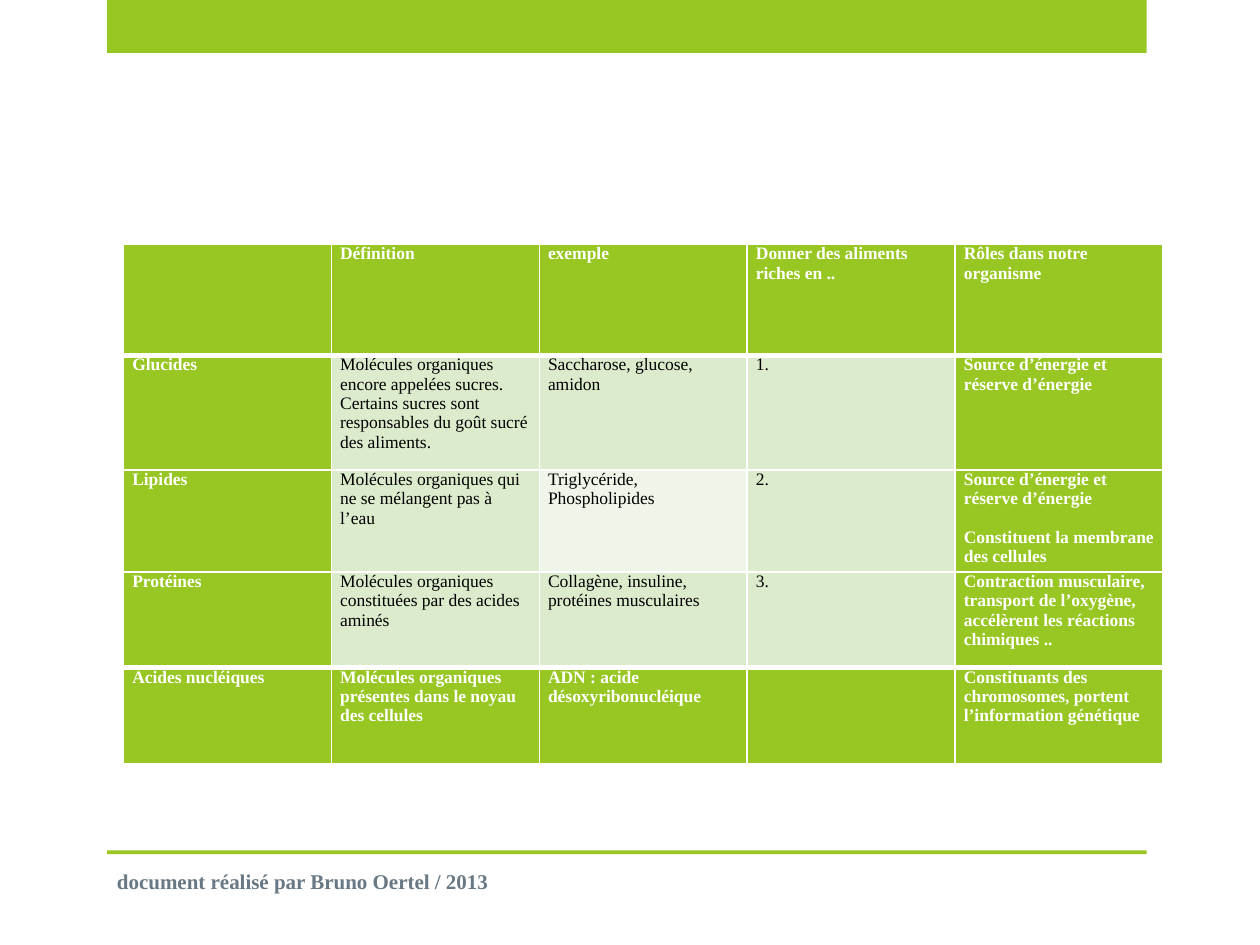
import pptx
import pptx.dml.color
import pptx.enum.shapes
import pptx.enum.text
import pptx.oxml.ns
import pptx.util
import lxml.etree

Inches = pptx.util.Inches
Pt = pptx.util.Pt

# Content: each cell is a list of paragraphs
HEADER = [[], ["Définition"], ["exemple"], ["Donner des aliments riches en .."],
          ["Rôles dans notre organisme"]]
NUTRIENTS = [
    [["Glucides"],
     ["Molécules organiques encore appelées sucres. Certains sucres sont "
      "responsables du goût sucré des aliments."],
     ["Saccharose, glucose, amidon"], ["1."],
     ["Source d’énergie et réserve d’énergie"]],
    [["Lipides"],
     ["Molécules organiques qui ne se mélangent pas à l’eau"],
     ["Triglycéride, Phospholipides"], ["2."],
     ["Source d’énergie et réserve d’énergie",
      "Constituent la membrane des cellules"]],
    [["Protéines"],
     ["Molécules organiques constituées par des acides aminés"],
     ["Collagène, insuline, protéines musculaires"], ["3."],
     ["Contraction musculaire, transport de l’oxygène, accélèrent les "
      "réactions chimiques .."]],
    [["Acides nucléiques"],
     ["Molécules organiques présentes dans le noyau des cellules"],
     ["ADN : acide désoxyribonucléique"], [],
     ["Constituants des chromosomes, portent l’information génétique"]],
]
ROWS = [HEADER] + NUTRIENTS
FOOTER = "document réalisé par Bruno Oertel / 2013"

THEME = {
    "font": "Times New Roman", "cell_size": 10, "footer_size": 12,
    "green": "98C723", "pale": "DDEBCD", "palest": "EFF5E8",
    "white": "FFFFFF", "black": "000000", "grey": "687884",
    "thin": 1, "thick": 3,
}

# Layout in inches
BAND_LEFT, WIDTH = 0.85, 8.25
BANDS = [(0, 0.42), (6.75, 0.03)]  # top, height
TABLE_LEFT, TABLE_TOP = 0.98, 1.94
ROW_HEIGHTS = [0.88, 0.91, 0.81, 0.76, 0.76]
LAST_ROW, LAST_COL = len(ROWS) - 1, len(HEADER) - 1
HIGHLIGHT = (2, 2)


def rgb(name):
    return pptx.dml.color.RGBColor.from_string(THEME[name])


def style(paragraph, size, color, bold):
    font = paragraph.font
    font.name, font.size, font.bold = THEME["font"], Pt(THEME[size]), bold
    font.color.rgb = rgb(color)


def add_borders(cell, row):
    widths = {
        "lnL": THEME["thin"],
        "lnR": THEME["thin"],
        "lnT": THEME["thick"] if row in (1, LAST_ROW) else THEME["thin"],
        "lnB": THEME["thick"] if row in (0, LAST_ROW - 1) else THEME["thin"],
    }
    qn = pptx.oxml.ns.qn
    properties = cell._tc.get_or_add_tcPr()
    for position, (side, width) in enumerate(widths.items()):
        line = lxml.etree.Element(qn("a:" + side), w=str(Pt(width)))
        fill = lxml.etree.SubElement(line, qn("a:solidFill"))
        lxml.etree.SubElement(fill, qn("a:srgbClr"), val=THEME["white"])
        properties.insert(position, line)


def fill_cell(cell, paragraphs, row, col):
    edge = row in (0, LAST_ROW) or col in (0, LAST_COL)
    cell.margin_left = cell.margin_right = Inches(0.07)
    cell.margin_top = cell.margin_bottom = 0
    cell.fill.solid()
    cell.fill.fore_color.rgb = rgb(
        "green" if edge else "palest" if (row, col) == HIGHLIGHT else "pale")
    add_borders(cell, row)
    cell.text = "\n".join(paragraphs)
    for index, paragraph in enumerate(cell.text_frame.paragraphs):
        style(paragraph, "cell_size", "white" if edge else "black", edge)
        if index:
            paragraph.space_before = Pt(11)


def main():
    deck = pptx.Presentation()
    deck.slide_width, deck.slide_height = Inches(10), Inches(7.5)
    slide = deck.slides.add_slide(deck.slide_layouts[6])

    # Green bands
    for top, height in BANDS:
        band = slide.shapes.add_shape(
            pptx.enum.shapes.MSO_SHAPE.RECTANGLE,
            Inches(BAND_LEFT), Inches(top), Inches(WIDTH), Inches(height))
        band.shadow.inherit = False
        band.fill.solid()
        band.fill.fore_color.rgb = rgb("green")
        band.line.fill.background()

    # Nutrient table
    table = slide.shapes.add_table(
        len(ROWS), len(HEADER), Inches(TABLE_LEFT), Inches(TABLE_TOP),
        Inches(WIDTH), Inches(sum(ROW_HEIGHTS))).table
    for column in table.columns:
        column.width = Inches(WIDTH / len(HEADER))
    for row, (height, cells) in enumerate(zip(ROW_HEIGHTS, ROWS)):
        table.rows[row].height = Inches(height)
        for col, paragraphs in enumerate(cells):
            fill_cell(table.cell(row, col), paragraphs, row, col)

    # Footer
    footer = slide.shapes.add_textbox(
        Inches(0.83), Inches(6.79), Inches(5.33), Inches(0.4)).text_frame
    footer.word_wrap = True
    footer.vertical_anchor = pptx.enum.text.MSO_ANCHOR.MIDDLE
    footer.text = FOOTER
    style(footer.paragraphs[0], "footer_size", "grey", True)

    deck.save("out.pptx")


if __name__ == "__main__":
    main()
